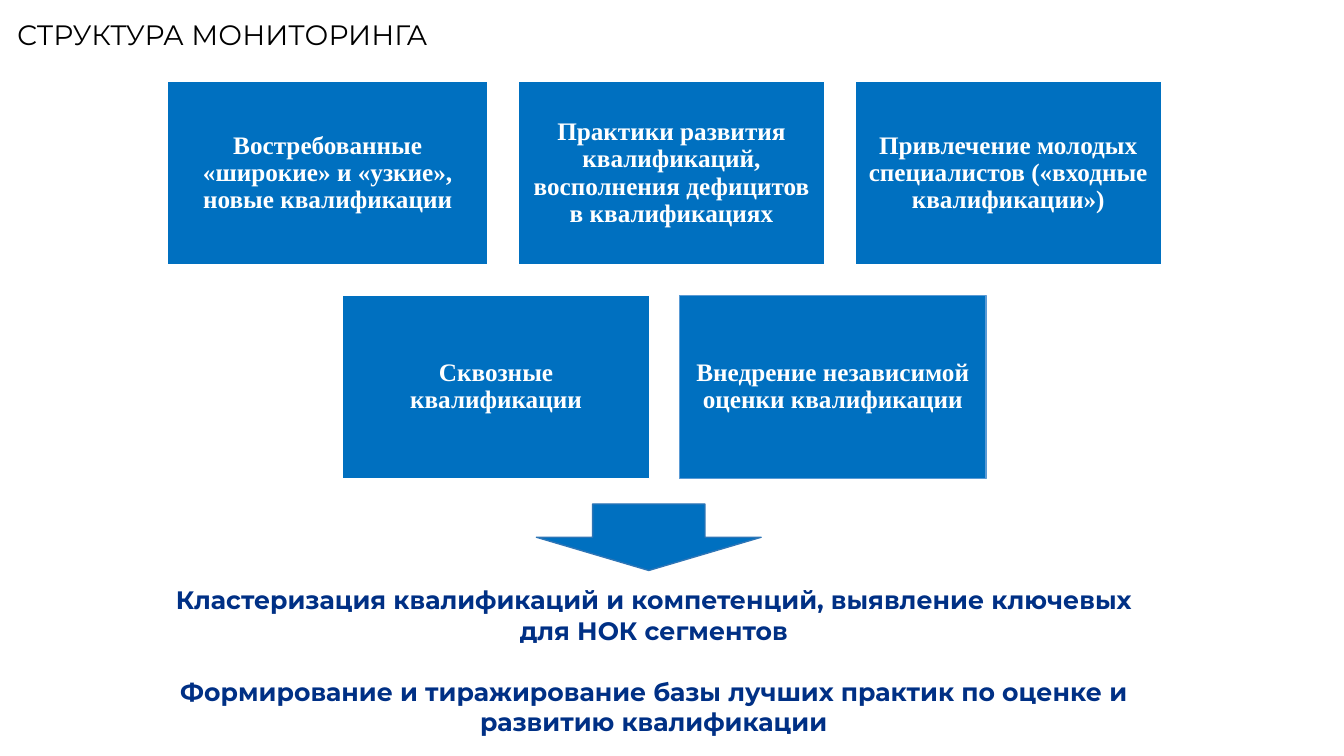
from pptx import Presentation
from pptx.dml.color import RGBColor
from pptx.enum.shapes import MSO_SHAPE
from pptx.enum.text import MSO_ANCHOR, PP_ALIGN
from pptx.util import Inches, Pt

WHITE = RGBColor(0xFF, 0xFF, 0xFF)
BLACK = RGBColor(0x00, 0x00, 0x00)
BLUE = RGBColor(0x00, 0x70, 0xC0)
LIGHT_BLUE = RGBColor(0x5B, 0x9B, 0xD5)
ARROW_EDGE = RGBColor(0x2E, 0x75, 0xB6)
NAVY = RGBColor(0x00, 0x30, 0x85)

TITLE = "СТРУКТУРА МОНИТОРИНГА"
ROWS = [
    (1.66, [
        ("Востребованные «широкие» и «узкие», новые квалификации", 3.18, WHITE),
        ("Практики развития квалификаций, восполнения дефицитов в квалификациях", 3.04, WHITE),
        ("Привлечение молодых специалистов («входные квалификации»)", 3.04, WHITE),
    ]),
    (3.4, [
        ("Сквозные квалификации", 3.04, WHITE),
        ("Внедрение независимой оценки квалификации", 3.04, LIGHT_BLUE),
    ]),
]
RESULTS = [
    "Кластеризация квалификаций и компетенций, выявление ключевых для НОК сегментов",
    "Формирование и тиражирование базы лучших практик по оценке и развитию квалификации",
]
ROWS_TOP, BOX_HEIGHT, GAP = 0.81, 1.82, 0.3


def style_paragraph(para, font_name, size, color, bold, align):
    """Set the font and alignment of one paragraph."""
    para.alignment = align
    para.font.name = font_name
    para.font.size = Pt(size)
    para.font.bold = bold
    para.font.color.rgb = color


def add_filled_shape(page, kind, left, top, width, height, edge):
    """Add a blue shape with a thin outline and no shadow."""
    shape = page.shapes.add_shape(
        kind, Inches(left), Inches(top), Inches(width), Inches(height))
    shape.shadow.inherit = False
    shape.fill.solid()
    shape.fill.fore_color.rgb = BLUE
    shape.line.color.rgb = edge
    shape.line.width = Pt(1)
    return shape


def add_title(page):
    """Place and format the slide title."""
    title = page.shapes.title
    title.left, title.top = Inches(0.07), Inches(0.14)
    title.width, title.height = Inches(12), Inches(0.45)
    frame = title.text_frame
    frame.text = TITLE
    frame.vertical_anchor = MSO_ANCHOR.MIDDLE
    para = frame.paragraphs[0]
    para.line_spacing = 0.9
    style_paragraph(para, "Montserrat", 20, BLACK, False, PP_ALIGN.LEFT)


def add_topic(page, text, left, top, width, edge):
    """Add one topic box with its centred text."""
    box = add_filled_shape(
        page, MSO_SHAPE.RECTANGLE, left, top, width, BOX_HEIGHT, edge)
    frame = box.text_frame
    frame.text = text
    frame.word_wrap = True
    frame.vertical_anchor = MSO_ANCHOR.MIDDLE
    frame.margin_left = frame.margin_right = Inches(0.07)
    frame.margin_top = frame.margin_bottom = Inches(0.07)
    para = frame.paragraphs[0]
    para.line_spacing = 0.9
    style_paragraph(para, "Times New Roman", 18, WHITE, True, PP_ALIGN.CENTER)


def add_results(page):
    """Add the two conclusions under the arrow."""
    box = page.shapes.add_textbox(
        Inches(1.42), Inches(5.75), Inches(10.13), Inches(1.62))
    frame = box.text_frame
    frame.word_wrap = True
    frame.text = "\n".join(RESULTS)
    for para in frame.paragraphs:
        style_paragraph(para, "Montserrat", 18, NAVY, True, PP_ALIGN.CENTER)
    frame.paragraphs[1].space_before = Pt(22)


def main():
    """Build the slide and save the deck."""
    deck = Presentation()
    deck.slide_width, deck.slide_height = Inches(13.33), Inches(7.5)
    page = deck.slides.add_slide(deck.slide_layouts[5])
    add_title(page)
    for row, (left, topics) in enumerate(ROWS):
        top = ROWS_TOP + row * (BOX_HEIGHT + GAP)
        for text, width, edge in topics:
            add_topic(page, text, left, top, width, edge)
            left += width + GAP
    add_filled_shape(page, MSO_SHAPE.DOWN_ARROW, 5.32, 5, 2.23, 0.66, ARROW_EDGE)
    add_results(page)
    deck.save("out.pptx")


if __name__ == "__main__":
    main()
